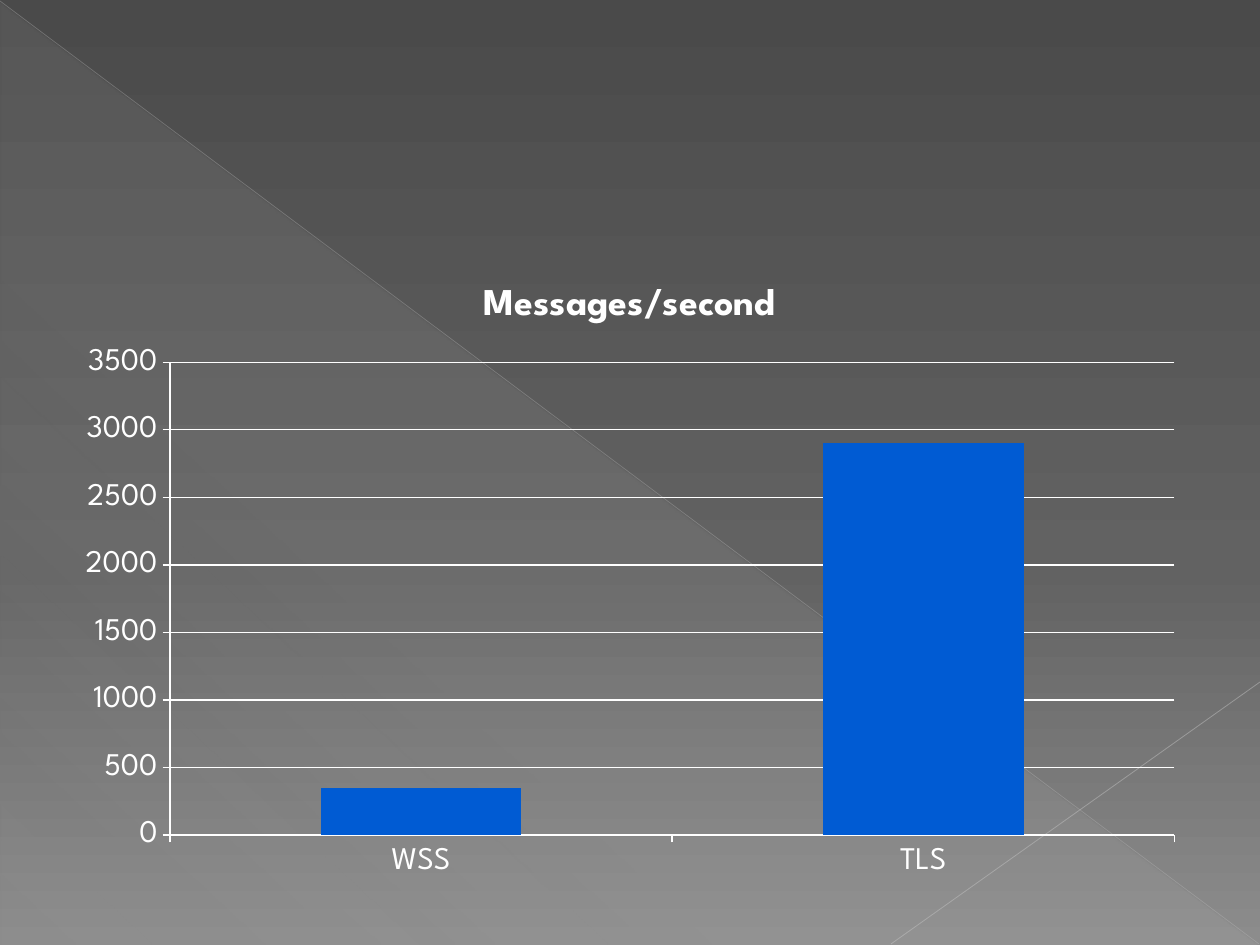
"""Build a slide with a column chart comparing message rates."""
from dataclasses import dataclass

import lxml.etree
import pptx
import pptx.chart.data
import pptx.dml.color
import pptx.enum.chart
import pptx.enum.shapes
import pptx.oxml.ns
import pptx.util

EMU_PER_PX = 914400 / 126
FONT = "League Spartan"
WHITE = "FFFFFF"
BAR_BLUE = "005BD3"


@dataclass(frozen=True)
class Stop:
    """One gradient stop, with position and opacity in percent."""
    position: int
    color: str
    opacity: int = 100


@dataclass(frozen=True)
class Ray:
    """A thin translucent line that decorates the background."""
    start: tuple[int, int]
    end: tuple[int, int]
    color: str
    width: float
    opacity: int


BACKDROP = [Stop(0, "4A4A4A"), Stop(60, "626262"), Stop(100, "8C8C8C")]
SHEEN = [Stop(0, "D2D2D2", 10), Stop(70, "D2D2D2", 8), Stop(100, "D2D2D2", 1)]
RAYS = [
    Ray((0, 1), (1259, 944), "BFBFBF", 0.39, 35),
    Ray((1260, 682), (891, 944), "C6C6C6", 0.47, 45),
]
RATES = {"WSS": 350, "TLS": 2900}


def px(length: int) -> pptx.util.Emu:
    """Turn pixels into EMU."""
    return pptx.util.Emu(round(length * EMU_PER_PX))


def rgb(color: str) -> pptx.dml.color.RGBColor:
    """Turn a hex string into a colour."""
    return pptx.dml.color.RGBColor.from_string(color)


def add_child(parent, tag: str, **attributes: str):
    """Append a DrawingML element to its parent."""
    return lxml.etree.SubElement(parent, pptx.oxml.ns.qn(tag), attributes)


def set_opacity(color_element, percent: int) -> None:
    """Give a colour element its opacity."""
    add_child(color_element, "a:alpha", val=str(percent * 1000))


def fill_gradient(fill, owner, stops: list[Stop], clockwise: int) -> None:
    """Fill with a linear gradient at a clockwise angle."""
    fill.gradient()
    fill.gradient_angle = 360 - clockwise
    stop_list = owner.xpath(".//a:gsLst")[0]
    for default_stop in list(stop_list):
        stop_list.remove(default_stop)
    for stop in stops:
        entry = add_child(stop_list, "a:gs", pos=str(stop.position * 1000))
        color = add_child(entry, "a:srgbClr", val=stop.color)
        if stop.opacity < 100:
            set_opacity(color, stop.opacity)


def draw_sheen(slide) -> None:
    """Draw the translucent triangle over the lower left half."""
    sheen = slide.shapes.add_shape(
        pptx.enum.shapes.MSO_SHAPE.RIGHT_TRIANGLE, px(1), px(3), px(1257), px(942))
    sheen.shadow.inherit = False
    sheen.line.fill.background()
    fill_gradient(sheen.fill, sheen.element, SHEEN, 133)


def draw_ray(slide, ray: Ray) -> None:
    """Draw one decorative line."""
    line = slide.shapes.add_connector(
        pptx.enum.shapes.MSO_CONNECTOR.STRAIGHT, *map(px, ray.start + ray.end))
    line.line.color.rgb = rgb(ray.color)
    line.line.width = pptx.util.Pt(ray.width)
    set_opacity(line.element.xpath(".//a:ln//a:srgbClr")[0], ray.opacity)
    add_child(line.element.spPr, "a:effectLst")


def style_font(font, size: float, bold: bool) -> None:
    """Set the white chart lettering."""
    font.name = FONT
    font.size = pptx.util.Pt(size)
    font.bold = bold
    font.color.rgb = rgb(WHITE)


def style_line(line) -> None:
    """Set a thin white chart line."""
    line.color.rgb = rgb(WHITE)
    line.width = pptx.util.Pt(0.75)


def draw_rates(slide, rates: dict[str, int]) -> None:
    """Draw the column chart of messages per second."""
    title = "Messages/second"
    rate_data = pptx.chart.data.CategoryChartData()
    rate_data.categories = list(rates)
    rate_data.add_series(title, list(rates.values()))
    chart = slide.shapes.add_chart(
        pptx.enum.chart.XL_CHART_TYPE.COLUMN_CLUSTERED,
        px(63), px(259), px(1134), px(630), rate_data).chart
    style_font(chart.font, 18, False)
    chart.has_legend = False
    chart.has_title = True
    heading = chart.chart_title.text_frame.paragraphs[0].add_run()
    heading.text = title
    style_font(heading.font, 21.6, True)

    for axis in (chart.category_axis, chart.value_axis):
        axis.major_tick_mark = pptx.enum.chart.XL_TICK_MARK.OUTSIDE
        axis.minor_tick_mark = pptx.enum.chart.XL_TICK_MARK.NONE
        style_line(axis.format.line)
    chart.value_axis.minimum_scale = 0
    chart.value_axis.maximum_scale = 3500
    chart.value_axis.major_unit = 500
    style_line(chart.value_axis.major_gridlines.format.line)

    columns = chart.plots[0]
    columns.gap_width = 150
    columns.vary_by_categories = False
    bar_fill = columns.series[0].format.fill
    bar_fill.solid()
    bar_fill.fore_color.rgb = rgb(BAR_BLUE)


def main() -> None:
    """Build and save the presentation."""
    deck = pptx.Presentation()
    deck.slide_width, deck.slide_height = px(1260), px(945)
    slide = deck.slides.add_slide(deck.slide_layouts[6])
    fill_gradient(slide.background.fill, slide.element, BACKDROP, 90)
    draw_sheen(slide)
    for ray in RAYS:
        draw_ray(slide, ray)
    draw_rates(slide, RATES)
    deck.save("out.pptx")


if __name__ == "__main__":
    main()
